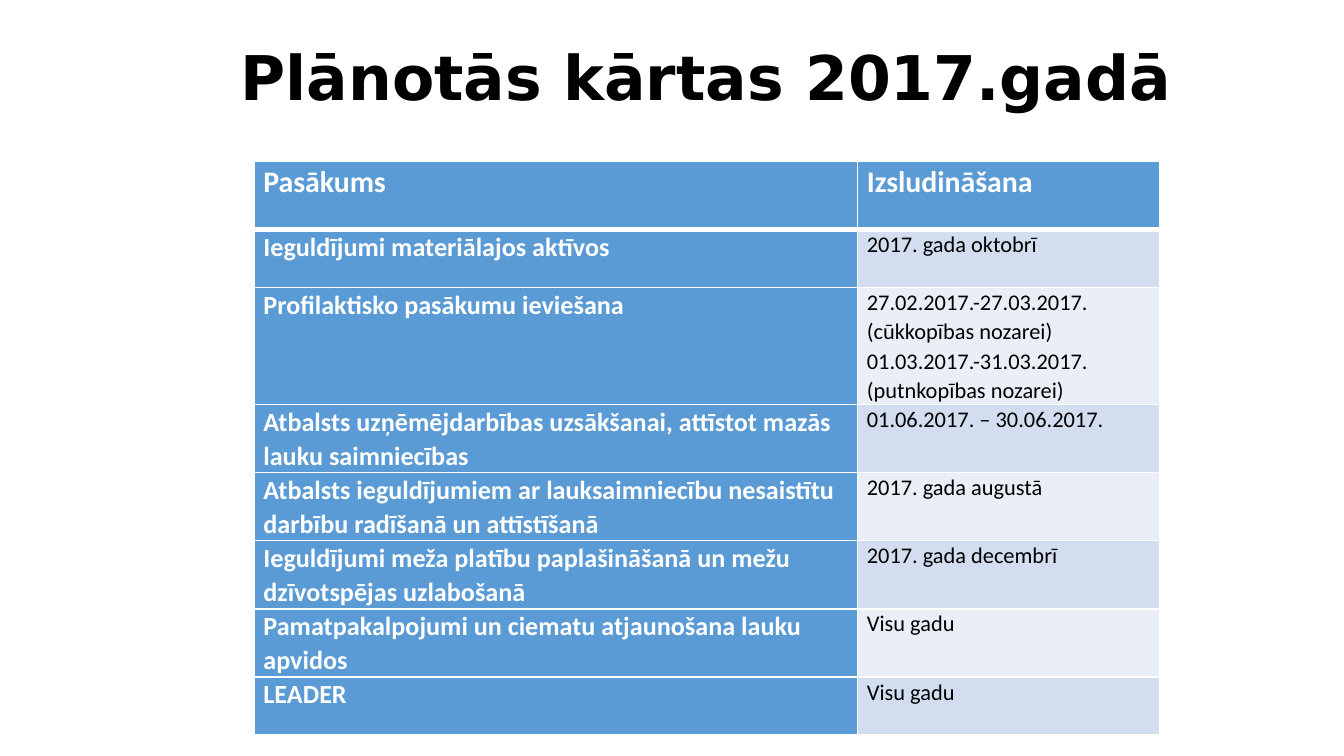
"""Build the slide listing the application rounds planned for 2017."""
from lxml import etree
from pptx import Presentation
from pptx import util as u
from pptx.dml.color import RGBColor
from pptx.enum import text
from pptx.oxml import ns

HEADING = "Plānotās kārtas 2017.gadā"
ROUNDS = [
    (0.51, "Pasākums", ["Izsludināšana"]),
    (0.43, "Ieguldījumi materiālajos aktīvos", ["2017. gada oktobrī"]),
    (0.86, "Profilaktisko pasākumu ieviešana",
     ["27.02.2017.-27.03.2017. (cūkkopības nozarei)",
      "01.03.2017.-31.03.2017. (putnkopības nozarei)"]),
    (0.49, "Atbalsts uzņēmējdarbības uzsākšanai, attīstot mazās lauku saimniecības",
     ["01.06.2017. – 30.06.2017."]),
    (0.49, "Atbalsts ieguldījumiem ar lauksaimniecību nesaistītu darbību radīšanā un attīstīšanā",
     ["2017. gada augustā"]),
    (0.49, "Ieguldījumi meža platību paplašināšanā un mežu dzīvotspējas uzlabošanā",
     ["2017. gada decembrī"]),
    (0.49, "Pamatpakalpojumi un ciematu atjaunošana lauku apvidos", ["Visu gadu"]),
    (0.43, "LEADER", ["Visu gadu"]),
]
COLUMN_WIDTHS = [4.49, 2.25]
BLUE, WHITE, BLACK = "5B9BD5", "FFFFFF", "000000"
BANDS = ["EAEFF7", "D2DEEF"]
HEADER = {"size": u.Pt(16), "bold": True, "name": "Calibri"}
MEASURE = {"size": u.Pt(14), "bold": True, "name": "Calibri"}
DATE = {"size": u.Pt(12), "bold": False, "name": "Calibri"}
TITLE = {"size": u.Pt(33), "bold": True, "name": "DejaVu Sans"}
TITLE_BOX = {"left": 1.72, "top": 0, "width": 8.14, "height": 1.2}
CELL_MARGINS = {"margin_left": 0.07, "margin_top": 0, "margin_right": 0.07, "margin_bottom": 0}
TITLE_MARGINS = {"margin_left": 0.07, "margin_top": 0.04, "margin_right": 0.07, "margin_bottom": 0.04}


def set_lengths(target, lengths):
    for attribute, inches in lengths.items():
        setattr(target, attribute, u.Inches(inches))


def paint(color_format, hex_color):
    color_format.rgb = RGBColor.from_string(hex_color)


def write(frame, lines, style, hex_color, spacing):
    frame.text = "\n".join(lines)
    for paragraph in frame.paragraphs:
        paragraph.alignment = text.PP_ALIGN.LEFT
        paragraph.line_spacing = spacing
        for run in paragraph.runs:
            for attribute, value in style.items():
                setattr(run.font, attribute, value)
            paint(run.font.color, hex_color)


def add_borders(cell, widths):
    properties = cell._tc.get_or_add_tcPr()
    for side, points in widths.items():
        line = etree.SubElement(properties, ns.qn(f"a:ln{side}"), w=str(u.Pt(points)))
        solid = etree.SubElement(line, ns.qn("a:solidFill"))
        etree.SubElement(solid, ns.qn("a:srgbClr"), val=WHITE)


def fill_cell(cell, lines, style, ink, background, borders):
    set_lengths(cell, CELL_MARGINS)
    write(cell.text_frame, lines, style, ink, 1.07)
    add_borders(cell, borders)
    cell.fill.solid()
    paint(cell.fill.fore_color, background)


def add_title(slide):
    title = slide.shapes.title
    set_lengths(title, TITLE_BOX)
    frame = title.text_frame
    set_lengths(frame, TITLE_MARGINS)
    frame.word_wrap = True
    frame.vertical_anchor = text.MSO_ANCHOR.MIDDLE
    write(frame, [HEADING], TITLE, BLACK, 0.9)


def add_rounds(slide):
    table = slide.shapes.add_table(
        len(ROUNDS), len(COLUMN_WIDTHS), u.Inches(1.89), u.Inches(1.2),
        u.Inches(sum(COLUMN_WIDTHS)), u.Inches(sum(row[0] for row in ROUNDS))).table
    for column, width in zip(table.columns, COLUMN_WIDTHS):
        column.width = u.Inches(width)
    for index, (height, measure, dates) in enumerate(ROUNDS):
        table.rows[index].height = u.Inches(height)
        is_header = index == 0
        borders = {"L": 1, "R": 1, "T": 3 if index == 1 else 1, "B": 3 if is_header else 1}
        fill_cell(table.cell(index, 0), [measure], HEADER if is_header else MEASURE,
                  WHITE, BLUE, borders)
        fill_cell(table.cell(index, 1), dates, HEADER if is_header else DATE,
                  WHITE if is_header else BLACK,
                  BLUE if is_header else BANDS[index % 2], borders)


def main():
    deck = Presentation()
    deck.slide_width, deck.slide_height = u.Inches(10), u.Pt(405)
    slide = deck.slides.add_slide(deck.slide_layouts[5])
    add_title(slide)
    add_rounds(slide)
    deck.save("out.pptx")


if __name__ == "__main__":
    main()
